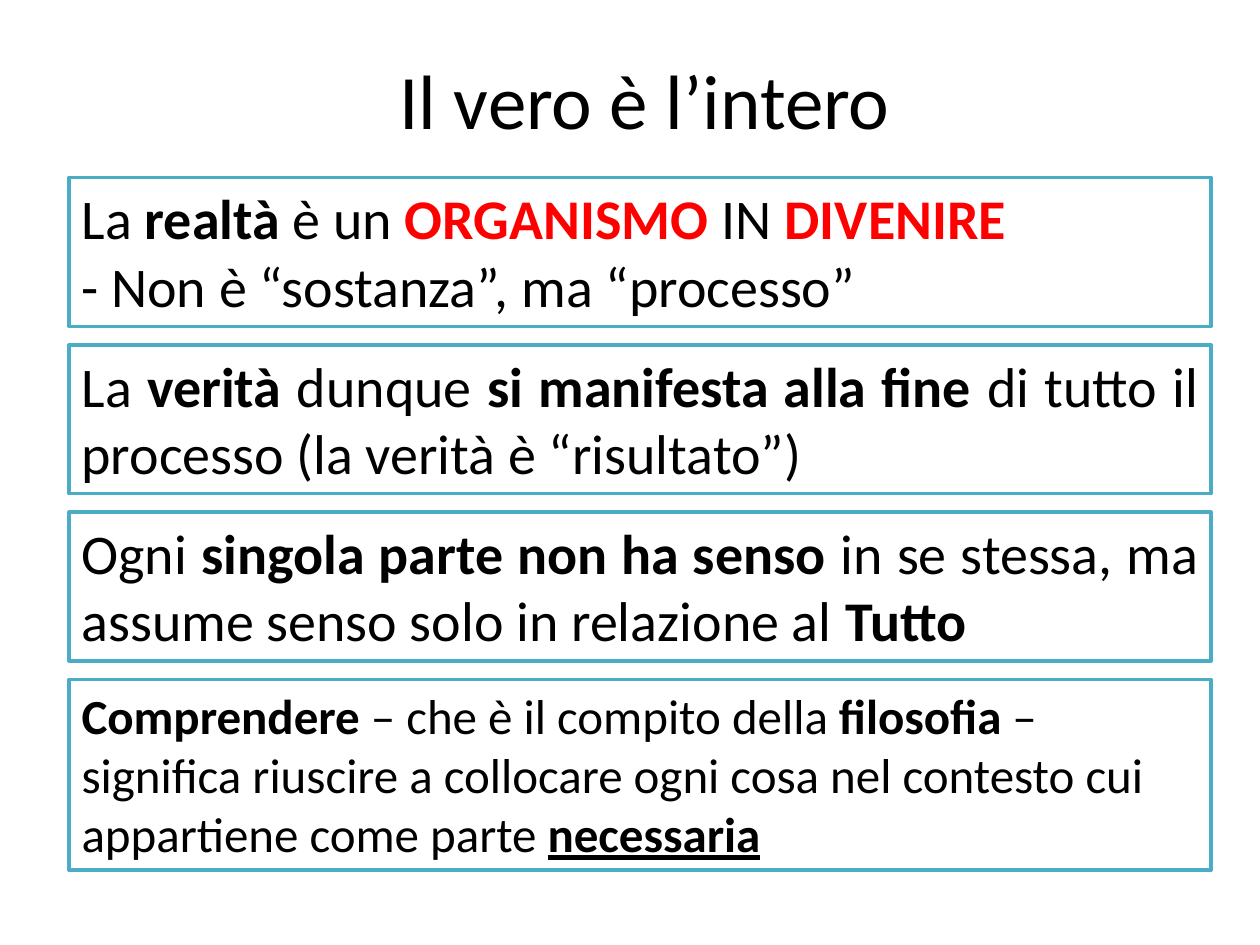
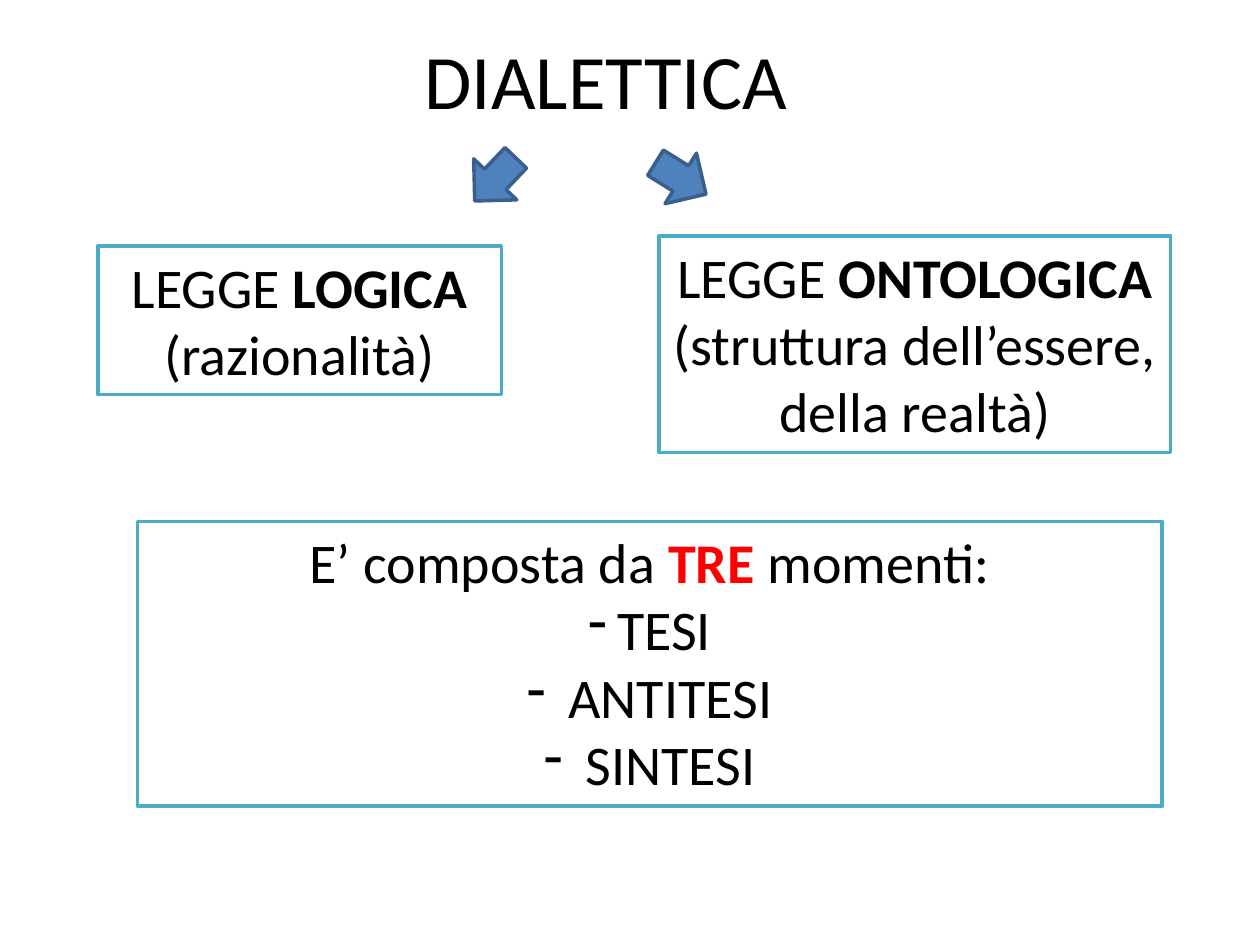
from pptx import Presentation
from pptx.enum import shapes, text
from pptx.dml.color import RGBColor
from pptx.util import Pt
from lxml import etree

# Content: each span is (words, style), style letters: b bold, r red, u underlined
WHOLE_TITLE = "Il vero è l’intero"
WHOLE_BOXES = [  # paragraphs, text size, justified, height
    ([[("La ", ""), ("realtà", "b"), (" è un ", ""), ("ORGANISMO", "br"),
       (" IN ", ""), ("DIVENIRE", "br")],
      [("- Non è “sostanza”, ma “processo”", "")]], 32, True, 85),
    ([[("La ", ""), ("verità ", "b"), ("dunque", ""), (" si manifesta alla fine ", "b"),
       ("di tutto il processo (la verità è “risultato”)", "")]], 32, True, 85),
    ([[("Ogni ", ""), ("singola parte non ha senso ", "b"),
       ("in se stessa, ma assume senso solo in relazione al ", ""),
       ("Tutto", "b")]], 32, True, 85),
    ([[("Comprendere", "b"), (" – che è il compito della ", ""), ("filosofia", "b"),
       (" – significa riuscire a collocare ogni cosa nel contesto cui "
        "appartiene come parte ", ""), ("necessaria", "bu")]], 28, False, 109),
]
DIALECTIC_TITLE = "DIALETTICA"
LAWS = [  # paragraphs, frame
    ([[("LEGGE ", ""), ("LOGICA", "b")], [("(razionalità)", "")]],
     (56, 140.5, 230.5, 85)),
    ([[("LEGGE ", ""), ("ONTOLOGICA", "b")],
      [("(struttura dell’essere, della realtà)", "")]],
     (376.5, 134.8, 292.5, 123.8)),
]
MOMENTS = [
    [("E’ composta da ", ""), ("TRE", "br"), (" momenti:", "")],
    [("TESI", "")], [(" ANTITESI", "")], [(" SINTESI", "")],
]
MOMENTS_FRAME = (78.5, 298, 585.5, 162.7)
ARROWS = [(372, 85, 31.9), (266, 85.5, 133.6)]  # left, top, rotation
ARROW_SIZE = 34

# Shared look
COLORS = {"paper": "FFFFFF", "ink": "000000", "accent": "FF0000",
          "frame": "4BACC6", "arrow": "4F81BD", "arrow_line": "3A5F8C"}
FONT = "Calibri"
ALIGN = text.PP_ALIGN
BOX_LEFT, BOX_TOP, BOX_WIDTH, BOX_GAP = 39.5, 101.5, 652.5, 10.6
DASH_INDENT = 16.5


def color(name):
    return RGBColor.from_string(COLORS[name])


def write(frame, paragraphs, size, align):
    frame.word_wrap = True
    for index, spans in enumerate(paragraphs):
        para = frame.paragraphs[0] if index == 0 else frame.add_paragraph()
        para.alignment = align
        para.font.name, para.font.size = FONT, Pt(size)
        for words, style in spans:
            span = para.add_run()
            span.text = words
            span.font.color.rgb = color("accent" if "r" in style else "ink")
            if "b" in style:
                span.font.bold = True
            if "u" in style:
                span.font.underline = True


def add_title(page, words, left, top):
    box = page.shapes.add_textbox(Pt(left), Pt(top), Pt(648), Pt(90))
    box.text_frame.vertical_anchor = text.MSO_ANCHOR.MIDDLE
    write(box.text_frame, [[(words, "")]], 44, ALIGN.CENTER)


def add_shape(page, kind, frame, fill, line):
    shape = page.shapes.add_shape(kind, *map(Pt, frame))
    shape.shadow.inherit = False
    shape.fill.solid()
    shape.fill.fore_color.rgb = color(fill)
    shape.line.color.rgb = color(line)
    shape.line.width = Pt(2)
    return shape


def add_box(page, frame, paragraphs, size=32, align=ALIGN.CENTER):
    box = add_shape(page, shapes.MSO_SHAPE.RECTANGLE, frame, "paper", "frame")
    box.text_frame.vertical_anchor = text.MSO_ANCHOR.TOP
    write(box.text_frame, paragraphs, size, align)
    return box


def add_dash(para):
    props = para._p.get_or_add_pPr()
    props.set("marL", str(Pt(DASH_INDENT)))
    props.set("indent", str(-Pt(DASH_INDENT)))
    space = props.nsmap["a"]
    bullet = etree.Element(f"{{{space}}}buChar", char="-")
    props.find(f"{{{space}}}defRPr").addprevious(bullet)


def build_whole(page):
    add_title(page, WHOLE_TITLE, 44.6, 11.5)
    top = BOX_TOP
    for paragraphs, size, justified, height in WHOLE_BOXES:
        align = ALIGN.JUSTIFY if justified else ALIGN.LEFT
        add_box(page, (BOX_LEFT, top, BOX_WIDTH, height), paragraphs, size, align)
        top += height + BOX_GAP


def build_dialectic(page):
    add_title(page, DIALECTIC_TITLE, 22.3, 0)
    for paragraphs, frame in LAWS:
        add_box(page, frame, paragraphs)
    for left, top, rotation in ARROWS:
        arrow = add_shape(page, shapes.MSO_SHAPE.RIGHT_ARROW,
                          (left, top, ARROW_SIZE, ARROW_SIZE), "arrow", "arrow_line")
        arrow.rotation = rotation
    moments = add_box(page, MOMENTS_FRAME, MOMENTS)
    for para in moments.text_frame.paragraphs[1:]:
        add_dash(para)


def main():
    deck = Presentation()
    deck.slide_width, deck.slide_height = Pt(720), Pt(540)
    for build in (build_whole, build_dialectic):
        build(deck.slides.add_slide(deck.slide_layouts[6]))
    deck.save("out.pptx")


if __name__ == "__main__":
    main()
